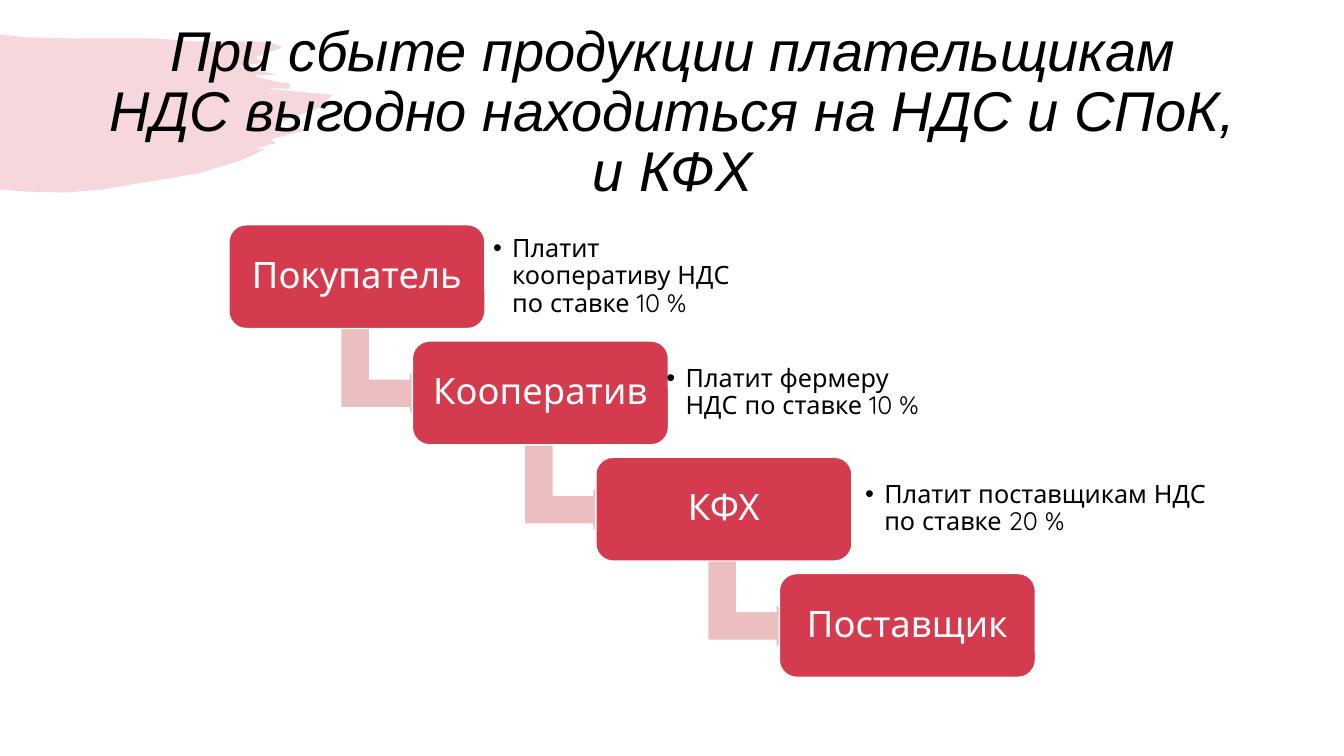
import pptx
import pptx.util
import pptx.dml.color
import pptx.enum.shapes
import pptx.enum.text
import pptx.oxml
import pptx.oxml.ns

Inches, Pt = pptx.util.Inches, pptx.util.Pt
SHAPE = pptx.enum.shapes.MSO_SHAPE
ALIGN = pptx.enum.text.PP_ALIGN
RED, PINK, WHITE, BLACK = "D43B4E", "EBBFC2", "FFFFFF", "000000"


def paint(shape, color, line=None):
    """Set a flat fill and, if a colour is given, a 1 pt line."""
    shape.shadow.inherit = False
    shape.fill.solid()
    shape.fill.fore_color.rgb = pptx.dml.color.RGBColor.from_string(color)
    if line:
        shape.line.color.rgb = pptx.dml.color.RGBColor.from_string(line)
        shape.line.width = Pt(1)
    else:
        shape.line.fill.background()


def write(shape, text, size, font="Quicksand", color=WHITE, align=ALIGN.CENTER,
          italic=False, bullet=False, inset=0.1):
    frame = shape.text_frame
    frame.word_wrap = True
    frame.auto_size = pptx.enum.text.MSO_AUTO_SIZE.NONE
    frame.vertical_anchor = pptx.enum.text.MSO_ANCHOR.MIDDLE
    frame.margin_left = frame.margin_right = Inches(inset)
    frame.margin_top = frame.margin_bottom = Inches(inset)
    par = frame.paragraphs[0]
    par.alignment, par.line_spacing = align, 0.9
    run = par.add_run()
    run.text = text
    run.font.name, run.font.size, run.font.italic = font, Pt(size), italic
    run.font.color.rgb = pptx.dml.color.RGBColor.from_string(color)
    if bullet:
        props = par._p.get_or_add_pPr()
        props.set("marL", str(Inches(0.19)))
        props.set("indent", str(-Inches(0.19)))
        space = pptx.oxml.ns.nsdecls("a")
        for tag in ('buFont %s typeface="Arial"', 'buChar %s char="•"'):
            props.append(pptx.oxml.parse_xml(f"<a:{tag % space}/>"))


deck = pptx.Presentation()
deck.slide_width, deck.slide_height = Inches(13.33), Inches(7.5)
slide = deck.slides.add_slide(deck.slide_layouts[5])
shapes = slide.shapes

# Brush stroke, in hundredths of an inch
edge = [
    (0, 34), (25, 37), (66, 38), (151, 38), (194, 41), (248, 41), (268, 42),
    (280, 47), (253, 57), (262, 62), (238, 66), (275, 74), (251, 75),
    (273, 81), (288, 83), (287, 88), (263, 88), (330, 94), (318, 106),
    (307, 111), (280, 120), (274, 128), (308, 128), (269, 138), (273, 142),
    (252, 148), (263, 148), (240, 159), (197, 172), (102, 188), (65, 191),
    (23, 190), (0, 188),
]
pen = shapes.build_freeform(*edge[0], scale=Inches(0.01))
pen.add_line_segments(edge[1:], close=True)
stroke = pen.convert_to_shape()
paint(stroke, RED)
tint = stroke._element.spPr.find(".//" + pptx.oxml.ns.qn("a:srgbClr"))
tint.append(pptx.oxml.parse_xml(
    f'<a:alpha {pptx.oxml.ns.nsdecls("a")} val="20000"/>'))
shapes._spTree.insert(2, stroke._element)

title = shapes.title
title.left, title.top = Inches(0.92), Inches(0.4)
title.width, title.height = Inches(11.5), Inches(1.45)
write(title, "При сбыте продукции плательщикам НДС выгодно находиться на НДС и СПоК, и КФХ",
      40, font="Arial", color=BLACK, italic=True)

# Staircase: name, note, note's left and width
stairs = [
    ("Покупатель", "Платит кооперативу НДС по ставке 10 %", 4.82, 2.52),
    ("Кооператив", "Платит фермеру НДС по ставке 10 %", 6.54, 2.86),
    ("КФХ", "Платит поставщикам НДС по ставке 20 %", 8.51, 3.61),
    ("Поставщик", None, 0, 0),
]
for i, (name, note, left, width) in enumerate(stairs):
    x, y = 2.27 + 1.82 * i, 2.23 + 3.46 / 3 * i
    if note:
        arrow = shapes.add_shape(SHAPE.BENT_UP_ARROW, Inches(x + 1.17),
                                 Inches(y + 0.96), Inches(0.87), Inches(0.99))
        arrow.rotation = 90
        for k, value in enumerate((0.33, 0.25, 0.36)):
            arrow.adjustments[k] = value
        paint(arrow, PINK, WHITE)
    box = shapes.add_shape(SHAPE.ROUNDED_RECTANGLE, Inches(x), Inches(y),
                           Inches(2.54), Inches(1.03))
    paint(box, RED, WHITE)
    write(box, name, 26, inset=0.11)
    if note:
        label = shapes.add_textbox(Inches(left), Inches(y + 0.1),
                                   Inches(width), Inches(0.83))
        write(label, note, 18, color=BLACK, align=ALIGN.LEFT, bullet=True, inset=0.07)

deck.save("out.pptx")
